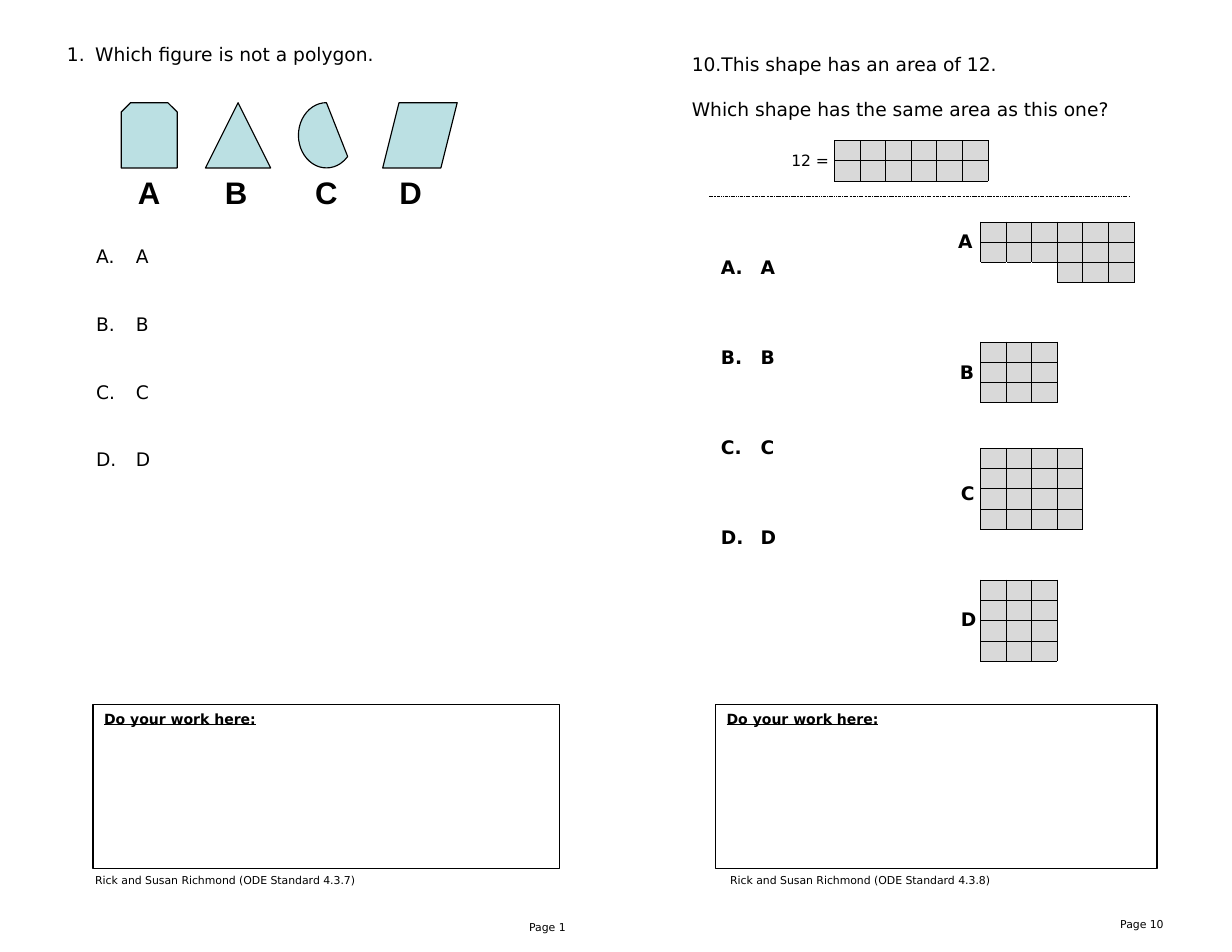
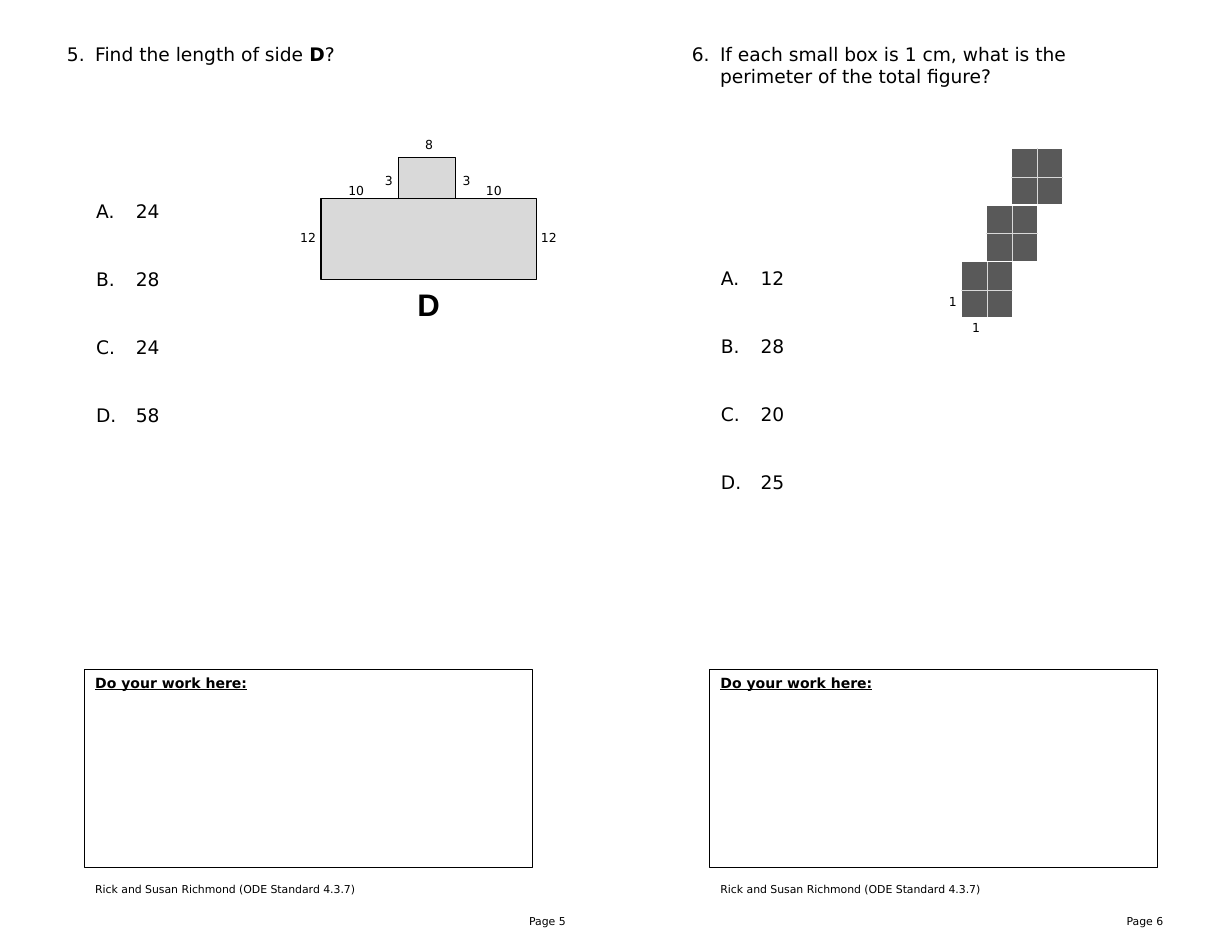
from lxml.etree import SubElement
from pptx import Presentation
from pptx.dml.color import RGBColor
from pptx.enum.dml import MSO_LINE
from pptx.enum.shapes import MSO_CONNECTOR, MSO_SHAPE
from pptx.enum.text import MSO_ANCHOR, PP_ALIGN
from pptx.oxml import parse_xml
from pptx.oxml.ns import nsdecls, qn
from pptx.util import Cm, Pt

BLACK, WHITE, GREY, DARK, AQUA = "000000", "FFFFFF", "D9D9D9", "595959", "BBE0E3"
BODY, LABEL = "DejaVu Sans", "Arial"
LINE_PITCH, LINE_HEIGHT = 14.4, 14  # points, for 12 point text
COLUMN_WIDTH = 0.58  # cm, one grid square

# Boxes are (left, top, width, height) in cm. Asterisks enclose bold words.
# Gaps count text lines: to the first answer, then between answers.
SHEETS = [
    [
        dict(number=1, question=["Which figure is not a polygon."],
             answers=["A", "B", "C", "D"], gaps=(9, 3), question_box=(1.27, 0.84, 9.73, 11.02),
             work_box=(2.11, 15.98, 10.59, 3.71), standard="4.3.7",
             credit_at=(1.91, 19.69), page_box=(11, 20.75, 2.08, 0.76)),
        dict(number=10, question=["This shape has an area of 12.",
                                  "Which shape has the same area as this one?"],
             answers=["*A*", "*B*", "*C*", "*D*"], gaps=(7, 4),
             question_box=(15.44, 1.07, 10.8, 11.53),
             work_box=(16.23, 15.98, 10.01, 3.71), standard="4.3.8",
             credit_at=(16.31, 19.69), page_box=(24.56, 20.68, 2.08, 0.76)),
    ],
    [
        dict(number=5, question=["Find the length of side *D*?"],
             answers=["24", "28", "24", "58"], gaps=(7, 3), question_box=(1.27, 0.84, 10.8, 10),
             work_box=(1.91, 15.18, 10.16, 4.5), standard="4.3.7",
             credit_at=(1.91, 19.9), page_box=(11.43, 20.61, 1.65, 0.63)),
        dict(number=6, question=["If each small box is 1 cm, what is the perimeter "
                                 "of the total figure?"],
             answers=["12", "28", "20", "25"], gaps=(9, 3), question_box=(15.44, 0.84, 11, 11.53),
             work_box=(16.09, 15.18, 10.16, 4.5), standard="4.3.7",
             credit_at=(16.09, 19.9), page_box=(24.98, 20.61, 1.65, 0.63)),
    ],
]

# letter, preset, left, width, left of letter
FIGURES = [
    ("A", MSO_SHAPE.SNIP_2_SAME_RECTANGLE, 2.75, 1.27, 2.75),
    ("B", MSO_SHAPE.ISOSCELES_TRIANGLE, 4.66, 1.48, 4.72),
    ("C", MSO_SHAPE.CHORD, 6.77, 1.27, 6.77),
    ("D", MSO_SHAPE.PARALLELOGRAM, 8.68, 1.69, 8.68),
]

# letter, its left and top, top of the grid, rows of squares
AREA_CHOICES = [
    ("A", 21.48, 5.08, 5.03, ["######", "######", "...###"]),
    ("B", 21.52, 8.05, 7.75, ["###"] * 3),
    ("C", 21.54, 10.8, 10.16, ["####"] * 4),
    ("D", 21.54, 13.66, 13.15, ["###"] * 4),
]

SIDE_LENGTHS = [
    ("10", 7.65, 4.02), ("10", 10.77, 4.02), ("3", 8.48, 3.81), ("3", 10.24, 3.81),
    ("12", 6.56, 5.09), ("12", 12.02, 5.09),
]

LIGHT_GRID = dict(fill=GREY, inner=(BLACK, 0.25), outer=(BLACK, 0.25), row_height=0.46)
DARK_GRID = dict(fill=DARK, inner=(GREY, 0.25), outer=(WHITE, 1), row_height=0.64)


def rgb(color):
    return RGBColor.from_string(color)


def write(paragraph, text, size=12, font=BODY, bold=False, underline=False,
          align=PP_ALIGN.LEFT, before=0):
    """Fill a paragraph; words between asterisks are bold."""
    paragraph.alignment = align
    paragraph.space_before = Pt(before)
    for index, part in enumerate(text.split("*")):
        if part:
            run = paragraph.add_run()
            run.text = part
            run.font.size = Pt(size)
            run.font.name = font
            run.font.bold = bold or index % 2 == 1
            run.font.underline = underline
            run.font.color.rgb = rgb(BLACK)


def add_text(slide, box, text="", **style):
    frame = slide.shapes.add_textbox(*map(Cm, box)).text_frame
    frame.word_wrap = True
    if text:
        write(frame.paragraphs[0], text, **style)
    return frame


def add_outline(slide, preset, box, fill=None):
    shape = slide.shapes.add_shape(preset, *map(Cm, box))
    shape.shadow.inherit = False
    if fill:
        shape.fill.solid()
        shape.fill.fore_color.rgb = rgb(fill)
    else:
        shape.fill.background()
    shape.line.color.rgb = rgb(BLACK)
    shape.line.width = Pt(0.75)
    return shape


def number_paragraph(paragraph, scheme, start, indent, hanging):
    properties = paragraph._p.get_or_add_pPr()
    properties.set("marL", str(Cm(indent)))
    properties.set("indent", str(-Cm(hanging)))
    SubElement(properties, qn("a:buFont"), typeface=BODY)
    SubElement(properties, qn("a:buAutoNum"), type=scheme, startAt=str(start))


def add_question(slide, item):
    frame = add_text(slide, item["question_box"])
    to_answers, between = item["gaps"]

    def add_line(text, lines):
        paragraph = frame.add_paragraph() if lines else frame.paragraphs[0]
        write(paragraph, text, before=max(0, lines * LINE_PITCH - LINE_HEIGHT))
        return paragraph

    for index, sentence in enumerate(item["question"]):
        paragraph = add_line(sentence, 2 * index)
        if index == 0:
            number_paragraph(paragraph, "arabicPeriod", item["number"], 0.64, 0.64)
    for index, answer in enumerate(item["answers"]):
        paragraph = add_line(answer, between if index else to_answers)
        number_paragraph(paragraph, "alphaUcPeriod", 1, 1.56, 0.9)


def add_problem(slide, item):
    """Draw the question, work area and footer of one half sheet."""
    add_text(slide, item["page_box"], f"Page {item['number']}", size=7, align=PP_ALIGN.RIGHT)
    work = add_outline(slide, MSO_SHAPE.RECTANGLE, item["work_box"]).text_frame
    work.vertical_anchor = MSO_ANCHOR.TOP
    write(work.paragraphs[0], "Do your work here:", size=9, bold=True, underline=True)
    add_text(slide, (*item["credit_at"], 6.78, 0.56),
             f"Rick and Susan Richmond (ODE Standard {item['standard']})", size=7)
    add_question(slide, item)


def set_borders(cell, borders):
    """Borders come as (colour, points) for left, right, top, bottom."""
    properties = cell._tc.get_or_add_tcPr()
    for index, (side, (color, width)) in enumerate(zip("LRTB", borders)):
        properties.insert(index, parse_xml(
            f'<a:ln{side} {nsdecls("a")} w="{Pt(width)}"><a:solidFill>'
            f'<a:srgbClr val="{color}"/></a:solidFill></a:ln{side}>'))


def add_grid(slide, left, top, pattern, fill, inner, outer, row_height):
    """Draw a table whose # cells are squares and whose . cells are empty."""
    rows, columns = len(pattern), len(pattern[0])
    table = slide.shapes.add_table(rows, columns, Cm(left), Cm(top),
                                   Cm(columns * COLUMN_WIDTH), Cm(rows * row_height)).table
    table.first_row = table.horz_banding = False
    for column in table.columns:
        column.width = Cm(COLUMN_WIDTH)
    for row in table.rows:
        row.height = Cm(row_height)

    def is_square(r, c):
        return 0 <= r < rows and 0 <= c < columns and pattern[r][c] == "#"

    def border(square, neighbour):
        if square and neighbour:
            return inner
        return outer if square or neighbour else (WHITE, 0.25)

    for r in range(rows):
        for c in range(columns):
            cell, square = table.cell(r, c), is_square(r, c)
            cell.margin_left = cell.margin_right = cell.margin_top = cell.margin_bottom = 0
            cell.fill.solid()
            cell.fill.fore_color.rgb = rgb(fill if square else WHITE)
            SubElement(cell.text_frame.paragraphs[0]._p, qn("a:endParaRPr"), sz="500")
            neighbours = [(r, c - 1), (r, c + 1), (r - 1, c), (r + 1, c)]
            set_borders(cell, [border(square, is_square(*place)) for place in neighbours])


def add_divider(slide, left, right, top):
    divider = slide.shapes.add_connector(MSO_CONNECTOR.STRAIGHT, Cm(left), Cm(top),
                                         Cm(right), Cm(top))
    divider.line.color.rgb = rgb(BLACK)
    divider.line.width = Pt(0.25)
    divider.line.dash_style = MSO_LINE.DASH_DOT_DOT
    SubElement(divider._element.spPr, qn("a:effectLst"))


def draw_polygons_and_areas(slide):
    for letter, preset, left, width, letter_left in FIGURES:
        add_outline(slide, preset, (left, 2.33, width, 1.48), AQUA)
        add_text(slide, (letter_left, 3.81, 1.27, 1.11), letter, size=20, font=LABEL,
                 bold=True, align=PP_ALIGN.CENTER)
    add_grid(slide, 18.92, 3.18, ["######"] * 2, **LIGHT_GRID)
    add_text(slide, (17.58, 3.3, 1.47, 0.68), "12 =", size=10, align=PP_ALIGN.RIGHT)
    for letter, left, top, grid_top, pattern in AREA_CHOICES:
        add_grid(slide, 22.23, grid_top, pattern, **LIGHT_GRID)
        add_text(slide, (left, top, 1.06, 0.76), letter, bold=True)
    add_divider(slide, 16.09, 25.61, 4.44)


def draw_side_and_perimeter(slide):
    for block in [(9.03, 3.57, 1.3, 1.86), (7.28, 4.5, 4.88, 1.85)]:
        add_outline(slide, MSO_SHAPE.RECTANGLE, block, GREY)
    add_text(slide, (7.28, 6.35, 4.88, 1.11), "D", size=20, font=LABEL, bold=True,
             align=PP_ALIGN.CENTER)
    for length, left, top in SIDE_LENGTHS:
        add_text(slide, (left, top, 1.06, 0.6), length, size=8)
    add_text(slide, (9.2, 2.98, 1.06, 0.6), "8", size=8, align=PP_ALIGN.CENTER)
    for step in range(3):
        add_grid(slide, 21.8 + 0.57 * step, 5.93 - 1.28 * step, ["##"] * 2, **DARK_GRID)
    for unit_box in [(21.8, 7.13, 0.64, 0.94), (21.27, 6.55, 0.85, 0.6)]:
        add_text(slide, unit_box, "1", size=8)


def main():
    deck = Presentation()
    deck.slide_width, deck.slide_height = Cm(27.94), Cm(21.59)
    for problems, draw in zip(SHEETS, [draw_polygons_and_areas, draw_side_and_perimeter]):
        slide = deck.slides.add_slide(deck.slide_layouts[6])
        for item in problems:
            add_problem(slide, item)
        draw(slide)
    deck.save("out.pptx")


if __name__ == "__main__":
    main()
